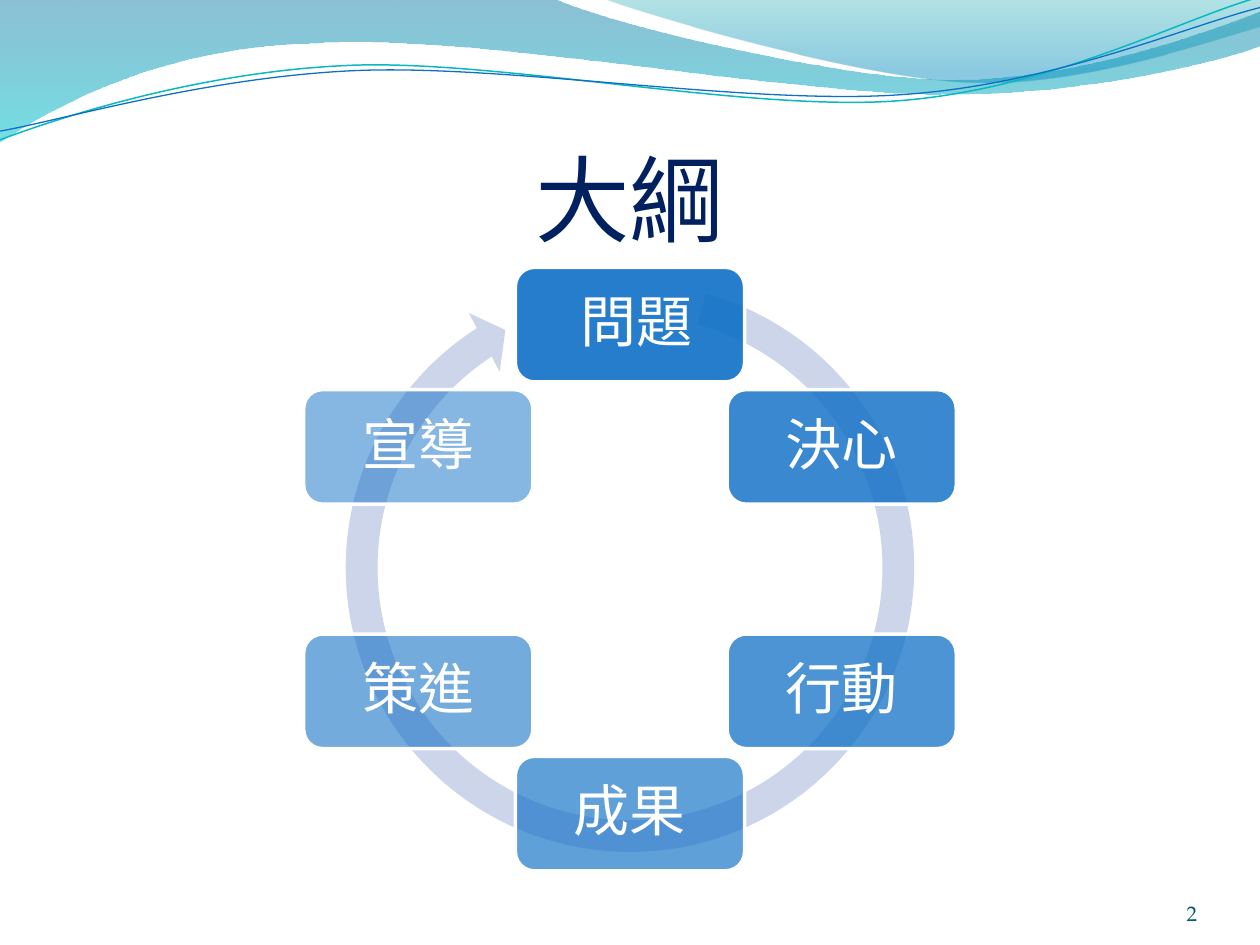
from math import cos, radians, sin

from pptx import Presentation
from pptx.dml.color import RGBColor
from pptx.enum.shapes import MSO_SHAPE
from pptx.enum.text import MSO_ANCHOR, PP_ALIGN
from pptx.oxml.ns import qn
from pptx.util import Pt
from lxml.etree import SubElement

SERIF = "TeX Gyre Pagella"
SANS = "Noto Sans CJK SC"
BLUE = "0F6FC6"
STEPS = [" 問題", "決心", "行動", "成果", "策進", "宣導"]

BANDS = [
    ([[(0, 0)], [(316.8, -0.7)],
      [(342.7, 12.2), (478.1, 45.4), (545.8, 45.4)],
      [(614.2, 45.4), (689.8, 18.7), (720, 6.5)],
      [(720.7, 25.9)],
      [(707.8, 31.7), (626.4, 54.7), (537.1, 54)],
      [(447.8, 54), (275, 20.2), (185, 24.5)],
      [(92.9, 25.9), (33.1, 59.8), (-0.7, 81.4)],
      [(0, 0)]],
     [(0, "0074A1", 45), (1, "00C6CF", 55)]),
    ([[(344.9, -0.7)],
      [(366.5, 7.9), (491, 44.6), (553.7, 46.8)],
      [(616.3, 49.7), (691.9, 23), (720, 15.1)],
      [(720, 0)], [(344.9, -0.7)]],
     [(0, "00A1A9", 30), (0.8, "008BBF", 45)]),
]
STRANDS = [
    ([[(0, 79.9)],
      [(34.6, 67), (113.8, 41), (199.4, 37.4)],
      [(284.4, 33.8), (427, 64.1), (513.4, 57.6)],
      [(599.8, 51.1), (675.4, 10.8), (718.6, -1.4)]],
     "0AB8BF", 0.85),
    ([[(0, 74.9)],
      [(33.8, 69.1), (118.1, 43.9), (203.8, 40.3)],
      [(290.2, 36.7), (429.8, 60.5), (516.2, 54)],
      [(601.9, 48.2), (677.5, 15.1), (720, 4.3)]],
     BLUE, 0.75),
]


def rgb(value):
    return RGBColor.from_string(value)


def set_attrs(obj, **values):
    for name, value in values.items():
        setattr(obj, name, value)


def set_alpha(parent, percent):
    for clr in parent.iter(qn("a:srgbClr")):
        SubElement(clr, qn("a:alpha")).set("val", str(percent * 1000))


def bend(sp, segments):
    lines = list(sp._element.iter(qn("a:lnTo")))
    for seg in segments:
        group, lines = lines[:len(seg)], lines[len(seg):]
        if len(seg) == 3:
            curve = group[0].makeelement(qn("a:cubicBezTo"))
            group[0].addprevious(curve)
            for line in group:
                curve.append(line[0])
                line.getparent().remove(line)


def add_outline(s, segments, close):
    start, *rest = [(Pt(x), Pt(y)) for seg in segments for x, y in seg]
    builder = s.shapes.build_freeform(*start)
    builder.add_line_segments(rest, close=close)
    sp = builder.convert_to_shape()
    bend(sp, segments[1:])
    sp.shadow.inherit = False
    return sp


def add_band(s, segments, stops):
    sp = add_outline(s, segments, True)
    sp.line.fill.background()
    sp.fill.gradient()
    sp.fill.gradient_angle = 270
    for stop, (position, color, alpha) in zip(sp.fill.gradient_stops, stops):
        stop.position = position
        stop.color.rgb = rgb(color)
        set_alpha(stop._gs, alpha)


def add_strand(s, segments, color, width):
    sp = add_outline(s, segments, False)
    sp.fill.background()
    sp.line.color.rgb = rgb(color)
    sp.line.width = Pt(width)


def write(sp, text, size, font, color, align, anchor, insets, spacing=1.0):
    tf = sp.text_frame
    sides = ("margin_left", "margin_top", "margin_right", "margin_bottom")
    set_attrs(tf, word_wrap=True, vertical_anchor=anchor,
              **{side: Pt(v) for side, v in zip(sides, insets)})
    p = tf.paragraphs[0]
    set_attrs(p, alignment=align, line_spacing=spacing)
    r = p.add_run()
    r.text = text
    set_attrs(r.font, size=Pt(size), name=font, bold=False)
    r.font.color.rgb = rgb(color)
    r.font._element.set("lang", "zh-TW")
    SubElement(r.font._element, qn("a:ea")).set("typeface", SANS)


def add_label(s, box, text, size, font, color, align, insets):
    sp = s.shapes.add_textbox(*map(Pt, box))
    write(sp, text, size, font, color, align, MSO_ANCHOR.BOTTOM, insets)


def add_solid(s, preset, box, color):
    sp = s.shapes.add_shape(preset, *map(Pt, box))
    sp.shadow.inherit = False
    sp.fill.solid()
    sp.fill.fore_color.rgb = rgb(color)
    return sp


def add_cycle_arrow(s):
    sp = add_solid(s, MSO_SHAPE.CIRCULAR_ARROW, (187.7, 152.1, 344.6, 344.6), "CCD5EA")
    sp.line.fill.background()
    for i, value in enumerate((0.05274, 3.126, 142.264, 171.28, 0.055)):
        sp.adjustments[i] = value


def add_step(s, index, text):
    width, height, radius = 131, 65.5, 139.7
    angle = radians(index * 360 / len(STEPS))
    cx, cy = 360 + radius * sin(angle), 325.2 - radius * cos(angle)
    box = (cx - width / 2, cy - height / 2, width, height)
    sp = add_solid(s, MSO_SHAPE.ROUNDED_RECTANGLE, box, BLUE)
    set_alpha(sp.fill._xPr.find(qn("a:solidFill")), 90 - 8 * index)
    sp.line.color.rgb = rgb("FFFFFF")
    sp.line.width = Pt(2)
    write(sp, text, 32, SERIF, "FFFFFF", PP_ALIGN.CENTER, MSO_ANCHOR.MIDDLE,
          (9.6,) * 4, 0.9)


def main():
    prs = Presentation()
    set_attrs(prs, slide_width=Pt(720), slide_height=Pt(540))
    s = prs.slides.add_slide(prs.slide_layouts[6])
    for band in BANDS:
        add_band(s, *band)
    for strand in STRANDS:
        add_strand(s, *strand)
    add_label(s, (36, 55.4, 648, 90), "大綱", 54, SANS, "002060",
              PP_ALIGN.CENTER, (0, 3.6, 0, 0))
    add_cycle_arrow(s)
    for index, text in enumerate(STEPS):
        add_step(s, index, text)
    add_label(s, (624, 500, 60, 28.8), "2", 12, SERIF, "045D75",
              PP_ALIGN.RIGHT, (0, 0, 0, 0))
    prs.save("out.pptx")


if __name__ == "__main__":
    main()
